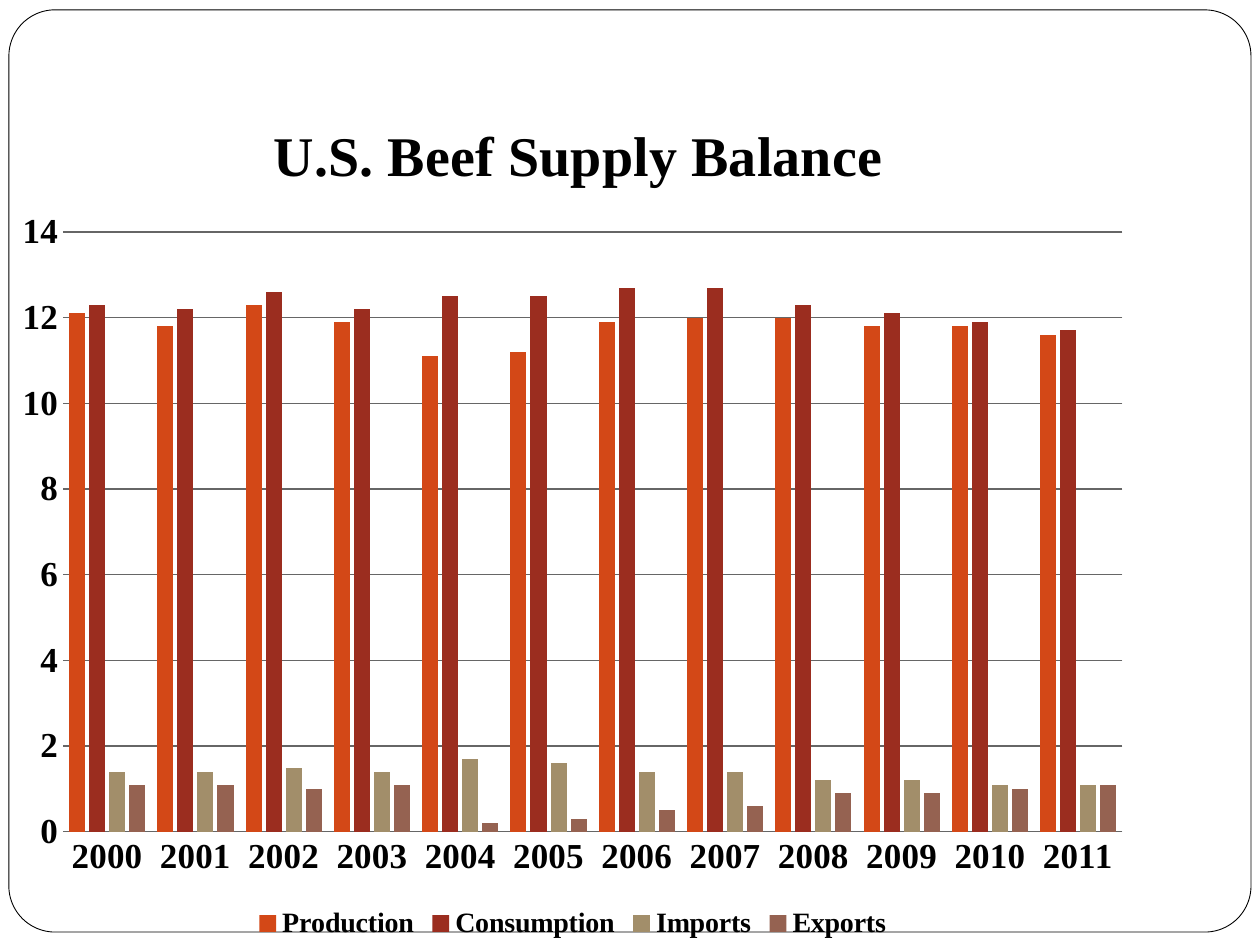
from dataclasses import dataclass

from lxml.etree import SubElement
from pptx import Presentation
from pptx.chart.data import CategoryChartData
from pptx.dml.color import RGBColor
from pptx.enum.chart import XL_CHART_TYPE, XL_LEGEND_POSITION, XL_TICK_MARK
from pptx.enum.shapes import MSO_SHAPE
from pptx.oxml.ns import qn
from pptx.util import Cm, Pt


@dataclass(frozen=True)
class Theme:
    font: str = "Times New Roman"
    ink: RGBColor = RGBColor(0, 0, 0)
    paper: RGBColor = RGBColor(255, 255, 255)
    grid: RGBColor = RGBColor(0x66, 0x66, 0x66)
    title: Pt = Pt(32)
    axis: Pt = Pt(20)
    legend: Pt = Pt(16)
    base: Pt = Pt(12)


@dataclass(frozen=True)
class Series:
    name: str
    color: str
    values: tuple[float, ...]


THEME = Theme()
YEARS = [str(year) for year in range(2000, 2012)]
BEEF = [
    Series("Production", "D34817",
           (12.1, 11.8, 12.3, 11.9, 11.1, 11.2, 11.9, 12, 12, 11.8, 11.8, 11.6)),
    Series("Consumption", "9B2D1F",
           (12.3, 12.2, 12.6, 12.2, 12.5, 12.5, 12.7, 12.7, 12.3, 12.1, 11.9, 11.7)),
    Series("Imports", "A28E6A",
           (1.4, 1.4, 1.5, 1.4, 1.7, 1.6, 1.4, 1.4, 1.2, 1.2, 1.1, 1.1)),
    Series("Exports", "956251",
           (1.1, 1.1, 1, 1.1, 0.2, 0.3, 0.5, 0.6, 0.9, 0.9, 1, 1.1)),
]


def style_font(font, size: Pt) -> None:
    font.name, font.size, font.bold = THEME.font, size, True
    font.color.rgb = THEME.ink


def place(part, index: int, **fractions: float) -> None:
    """Give a chart part a manual layout, in fractions of the chart."""
    for old in part.findall(qn("c:layout")):
        part.remove(old)
    layout = SubElement(part, qn("c:layout"))
    part.insert(index, layout)
    manual = SubElement(layout, qn("c:manualLayout"))
    if "w" in fractions:
        SubElement(manual, qn("c:layoutTarget")).set("val", "inner")
    for side in ("x", "y"):
        SubElement(manual, qn(f"c:{side}Mode")).set("val", "edge")
    for key, value in fractions.items():
        SubElement(manual, qn(f"c:{key}")).set("val", str(value))


def add_frame(slide) -> None:
    sp = slide.shapes.add_shape(MSO_SHAPE.ROUNDED_RECTANGLE,
                                Cm(0.18), Cm(0.2), Cm(25.04), Cm(18.59))
    sp.adjustments[0] = 0.05
    sp.shadow.inherit = False
    sp.fill.solid()
    sp.fill.fore_color.rgb = THEME.paper
    sp.line.color.rgb = THEME.ink
    sp.line.width = Pt(0.5)


def add_beef_chart(slide, title: str, series: list[Series]) -> None:
    data = CategoryChartData(number_format="General")
    data.categories = YEARS
    for s in series:
        data.add_series(s.name, s.values)
    chart = slide.shapes.add_chart(XL_CHART_TYPE.COLUMN_CLUSTERED, Cm(0), Cm(1.52),
                                   Cm(23.09), Cm(17.53), data).chart
    style_font(chart.font, THEME.base)

    # Title
    chart.has_title = True
    r = chart.chart_title.text_frame.paragraphs[0].add_run()
    r.text = title
    style_font(r.font, THEME.title)
    place(chart.element.find(".//" + qn("c:title")), 1, x=0.23, y=0.04)

    # Columns
    plot = chart.plots[0]
    plot.vary_by_categories = False
    plot.gap_width, plot.overlap = 75, -25
    for column, s in zip(plot.series, series):
        column.format.fill.solid()
        column.format.fill.fore_color.rgb = RGBColor.from_string(s.color)
    place(chart.element.find(".//" + qn("c:plotArea")), 0,
          x=0.055, y=0.18, w=0.925, h=0.69)

    # Axes
    for axis in (chart.category_axis, chart.value_axis):
        axis.major_tick_mark = axis.minor_tick_mark = XL_TICK_MARK.NONE
        style_font(axis.tick_labels.font, THEME.axis)
    chart.category_axis.format.line.color.rgb = THEME.grid
    values = chart.value_axis
    values.minimum_scale, values.maximum_scale, values.major_unit = 0, 14, 2
    values.format.line.fill.background()
    values.has_major_gridlines = True
    values.major_gridlines.format.line.color.rgb = THEME.grid
    values.major_gridlines.format.line.width = Pt(0.75)

    # Legend
    chart.has_legend = True
    chart.legend.position = XL_LEGEND_POSITION.BOTTOM
    chart.legend.include_in_layout = False
    style_font(chart.legend.font, THEME.legend)


def main() -> None:
    prs = Presentation()
    prs.slide_width, prs.slide_height = Cm(25.4), Cm(19.05)
    slide = prs.slides.add_slide(prs.slide_layouts[6])
    add_frame(slide)
    add_beef_chart(slide, "U.S. Beef Supply Balance", BEEF)
    prs.save("out.pptx")


if __name__ == "__main__":
    main()
